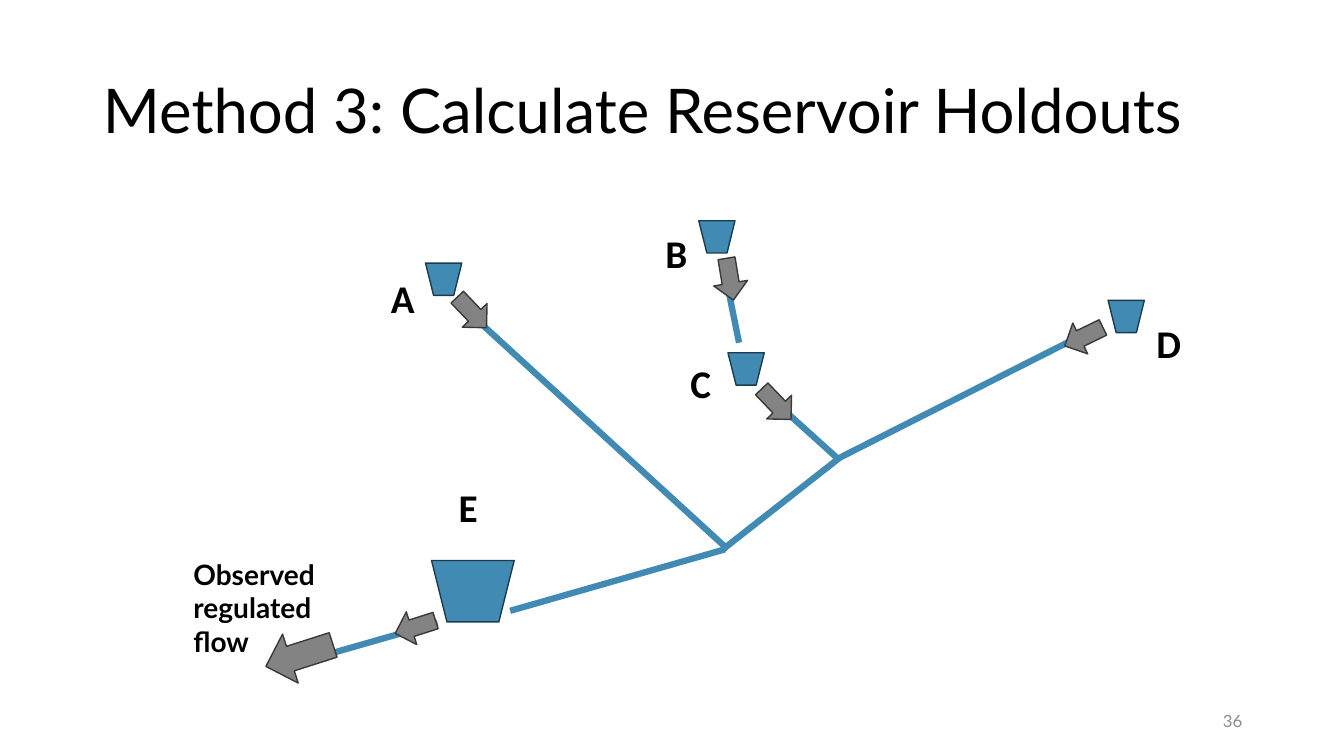
from lxml import etree
from pptx import Presentation
from pptx.dml.color import RGBColor
from pptx.enum.shapes import MSO_CONNECTOR, MSO_SHAPE
from pptx.enum.text import MSO_ANCHOR, PP_ALIGN
from pptx.oxml.ns import qn
from pptx.util import Inches, Pt

RIVER = "418AB3"
RESERVOIR_EDGE = "1C3C4E"
FLOW = "838383"
FLOW_EDGE = "393939"


def colour(value):
    return RGBColor.from_string(value)


def write(frame, text, size, font="Lato", color="000000", bold=False,
          align=PP_ALIGN.LEFT, anchor=MSO_ANCHOR.TOP, spacing=None):
    frame.word_wrap = True
    frame.vertical_anchor = anchor
    paragraph = frame.paragraphs[0]
    paragraph.alignment = align
    paragraph.line_spacing = spacing
    run = paragraph.add_run()
    run.text = text
    run.font.name = font
    run.font.size = Pt(size)
    run.font.bold = bold
    run.font.color.rgb = colour(color)


def add_label(slide, box, text, size, **style):
    label = slide.shapes.add_textbox(*map(Inches, box))
    write(label.text_frame, text, size, **style)


def add_river(slide, start, end):
    river = slide.shapes.add_connector(
        MSO_CONNECTOR.STRAIGHT, *map(Inches, start + end))
    river.line.color.rgb = colour(RIVER)
    river.line.width = Pt(4.5)
    etree.SubElement(river._element.spPr, qn("a:effectLst"))


def add_symbol(slide, kind, box, rotation, fill, edge):
    symbol = slide.shapes.add_shape(kind, *map(Inches, box))
    symbol.rotation = rotation
    symbol.shadow.inherit = False
    symbol.fill.solid()
    symbol.fill.fore_color.rgb = colour(fill)
    symbol.line.color.rgb = colour(edge)
    symbol.line.width = Pt(1)


def add_reservoir(slide, left, top, width=0.36, height=0.32):
    add_symbol(slide, MSO_SHAPE.TRAPEZOID, (left, top, width, height),
               180, RIVER, RESERVOIR_EDGE)


def add_flow(slide, left, top, rotation, width=0.42, height=0.34):
    add_symbol(slide, MSO_SHAPE.RIGHT_ARROW, (left, top, width, height),
               rotation, FLOW, FLOW_EDGE)


def add_title(slide, text):
    title = slide.shapes.title
    title.left, title.top = Inches(0.92), Inches(0.4)
    title.width, title.height = Inches(11.5), Inches(1.45)
    write(title.text_frame, text, 44, anchor=MSO_ANCHOR.MIDDLE, spacing=0.9)


def main():
    deck = Presentation()
    deck.slide_width, deck.slide_height = Inches(13.33), Inches(7.5)
    slide = deck.slides.add_slide(deck.slide_layouts[5])
    add_title(slide, "Method 3: Calculate Reservoir Holdouts")

    for start, end in [
        ((4.52, 2.98), (7.22, 5.45)),
        ((10.88, 3.25), (8.31, 4.55)),
        ((7.17, 2.61), (7.33, 3.4)),
        ((7.59, 3.9), (8.31, 4.55)),
        ((8.33, 4.54), (7.17, 5.45)),
        ((7.19, 5.45), (5.06, 6.06)),
        ((4.34, 6.18), (3.22, 6.5)),
    ]:
        add_river(slide, start, end)

    for left, top in [(4.22, 2.61), (6.93, 2.19), (10.99, 2.98), (7.22, 3.5)]:
        add_reservoir(slide, left, top)
    add_reservoir(slide, 4.28, 5.56, width=0.82, height=0.61)

    add_flow(slide, 2.62, 6.25, 162.3, width=0.7, height=0.51)
    for left, top, rotation in [
        (4.47, 2.93, 46.3),
        (7.03, 2.6, 80.6),
        (10.54, 3.17, 154.1),
        (7.49, 3.84, 46.3),
        (3.91, 6.05, 162.3),
    ]:
        add_flow(slide, left, top, rotation)

    for name, left, top in [
        ("A", 3.78, 2.67),
        ("B", 6.5, 2.23),
        ("C", 6.75, 3.52),
        ("D", 11.37, 3.12),
        ("E", 4.45, 4.75),
    ]:
        add_label(slide, (left, top, 0.5, 0.57), name, 28,
                  font="Calibri", bold=True)

    add_label(slide, (1.82, 5.48, 1.9, 0.77), "Observed regulated flow", 20,
              bold=True)
    add_label(slide, (9.42, 6.95, 3, 0.4), "36", 12, color="8C8C8C",
              align=PP_ALIGN.RIGHT, anchor=MSO_ANCHOR.MIDDLE)
    deck.save("out.pptx")


if __name__ == "__main__":
    main()
